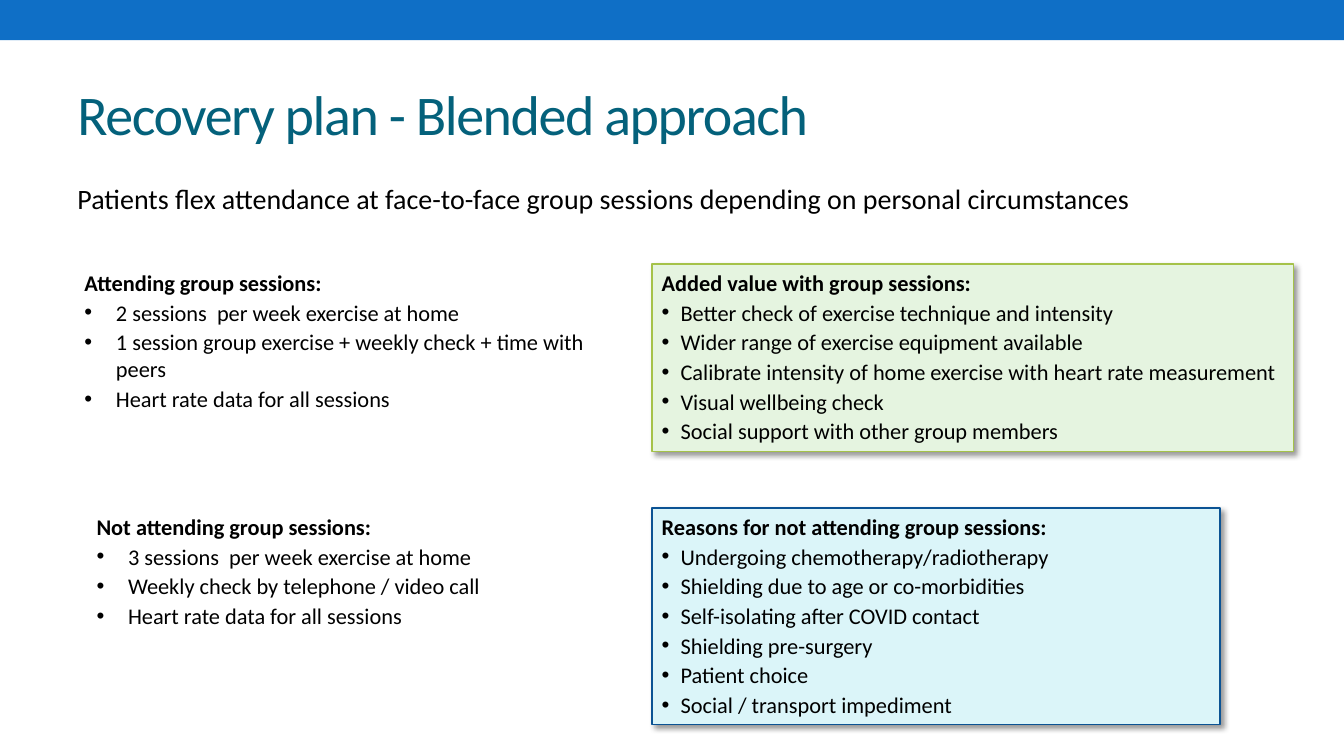
"""Build the slide on the blended recovery plan for group sessions."""

from dataclasses import dataclass
from typing import Optional

import lxml.etree
import pptx
import pptx.dml.color
import pptx.enum.shapes
import pptx.enum.text
import pptx.oxml.ns
import pptx.util

Pt = pptx.util.Pt
RGB = pptx.dml.color.RGBColor
qn = pptx.oxml.ns.qn


@dataclass(frozen=True)
class Theme:
    font: str = "Calibri"
    banner: str = "0F6FC6"
    title: str = "04617B"
    text: str = "000000"
    green_fill: str = "E5F4E0"
    green_line: str = "A5C249"
    blue_fill: str = "DBF5F9"
    blue_line: str = "0B5394"
    title_size: float = 40
    lead_size: float = 20
    list_size: float = 16


THEME = Theme()
PAGE_WIDTH, PAGE_HEIGHT = 960.48, 540
MARGIN = 48.24
RIGHT_COLUMN = 465.84
TOP_ROW, BOTTOM_ROW = 188.64, 362.88


@dataclass(frozen=True)
class Area:
    left: float
    top: float
    width: float
    height: float

    def lengths(self) -> tuple:
        return tuple(Pt(n) for n in (self.left, self.top, self.width, self.height))


@dataclass(frozen=True)
class Panel:
    area: Area
    heading: str
    items: tuple[str, ...]
    indent: float
    before: float = 0
    after: float = 0
    fill: Optional[str] = None
    line: Optional[str] = None


PANELS = (
    Panel(
        Area(53.28, TOP_ROW, 385.2, 110.16),
        "Attending group sessions:",
        (
            "2 sessions  per week exercise at home",
            "1 session group exercise + weekly check + time with peers",
            "Heart rate data for all sessions",
        ),
        indent=22.5,
        before=2,
    ),
    Panel(
        Area(61.92, BOTTOM_ROW, 291.6, 90.72),
        "Not attending group sessions:",
        (
            "3 sessions  per week exercise at home",
            "Weekly check by telephone / video call",
            "Heart rate data for all sessions",
        ),
        indent=22.5,
        before=2,
    ),
    Panel(
        Area(RIGHT_COLUMN, BOTTOM_ROW, 406.08, 154.8),
        "Reasons for not attending group sessions:",
        (
            "Undergoing chemotherapy/radiotherapy",
            "Shielding due to age or co-morbidities",
            "Self-isolating after COVID contact",
            "Shielding pre-surgery",
            "Patient choice",
            "Social / transport impediment",
        ),
        indent=13.5,
        after=2,
        fill=THEME.blue_fill,
        line=THEME.blue_line,
    ),
    Panel(
        Area(RIGHT_COLUMN, TOP_ROW, 458.64, 133.92),
        "Added value with group sessions:",
        (
            "Better check of exercise technique and intensity",
            "Wider range of exercise equipment available",
            "Calibrate intensity of home exercise with heart rate measurement",
            "Visual wellbeing check",
            "Social support with other group members",
        ),
        indent=13.5,
        after=2,
        fill=THEME.green_fill,
        line=THEME.green_line,
    ),
)


def add_rectangle(page, area: Area, fill: str, line: Optional[str] = None):
    """Draw a filled rectangle without a shadow."""
    box = page.shapes.add_shape(
        pptx.enum.shapes.MSO_SHAPE.RECTANGLE, *area.lengths()
    )
    box.shadow.inherit = False
    box.fill.solid()
    box.fill.fore_color.rgb = RGB.from_string(fill)
    if line:
        box.line.color.rgb = RGB.from_string(line)
        box.line.width = Pt(1)
    else:
        box.line.fill.background()
    return box


def add_shadow(box) -> None:
    """Give a shape a soft shadow towards the lower right."""
    effects = box.element.spPr.find(qn("a:effectLst"))
    shadow = lxml.etree.SubElement(
        effects, qn("a:outerShdw"), blurRad=str(Pt(4)), dist=str(Pt(3)),
        dir="2700000", algn="tl", rotWithShape="0",
    )
    colour = lxml.etree.SubElement(shadow, qn("a:srgbClr"), val="000000")
    lxml.etree.SubElement(colour, qn("a:alpha"), val="40000")


def style_paragraph(para, size: float, colour: str, bold: bool = False) -> None:
    """Set the font and the left alignment of a paragraph."""
    para.alignment = pptx.enum.text.PP_ALIGN.LEFT
    para.font.name = THEME.font
    para.font.size = Pt(size)
    para.font.bold = bold
    para.font.color.rgb = RGB.from_string(colour)


def add_bullet(para, indent: float) -> None:
    """Hang a paragraph on a round bullet."""
    properties = para._p.get_or_add_pPr()
    properties.set("marL", str(Pt(indent)))
    properties.set("indent", str(-Pt(indent)))
    font = lxml.etree.Element(qn("a:buFont"), typeface="Arial")
    bullet = lxml.etree.Element(qn("a:buChar"), char="•")
    defaults = properties.find(qn("a:defRPr"))
    defaults.addprevious(font)
    defaults.addprevious(bullet)


def add_line_of_text(page, area: Area, text: str, size: float, colour: str):
    """Add a text box with one paragraph and return its frame."""
    frame = page.shapes.add_textbox(*area.lengths()).text_frame
    frame.word_wrap = True
    frame.text = text
    style_paragraph(frame.paragraphs[0], size, colour)
    return frame


def add_panel(page, panel: Panel) -> None:
    """Draw a heading with its bulleted list, framed if it has a fill."""
    if panel.fill:
        box = add_rectangle(page, panel.area, panel.fill, panel.line)
        add_shadow(box)
    else:
        box = page.shapes.add_textbox(*panel.area.lengths())
    frame = box.text_frame
    frame.word_wrap = True
    frame.auto_size = pptx.enum.text.MSO_AUTO_SIZE.SHAPE_TO_FIT_TEXT
    frame.vertical_anchor = pptx.enum.text.MSO_ANCHOR.TOP
    frame.text = "\n".join((panel.heading, *panel.items))
    for index, para in enumerate(frame.paragraphs):
        style_paragraph(para, THEME.list_size, THEME.text, bold=index == 0)
        para.space_before = Pt(panel.before)
        para.space_after = Pt(panel.after)
        if index:
            add_bullet(para, panel.indent)


def main() -> None:
    """Build the deck and save it."""
    deck = pptx.Presentation()
    deck.slide_width, deck.slide_height = Pt(PAGE_WIDTH), Pt(PAGE_HEIGHT)
    page = deck.slides.add_slide(deck.slide_layouts[6])
    add_rectangle(page, Area(0, 0, PAGE_WIDTH, 28.8), THEME.banner)
    title = add_line_of_text(
        page, Area(MARGIN, 41.76, 864, 77.76),
        "Recovery plan - Blended approach", THEME.title_size, THEME.title,
    )
    title.vertical_anchor = pptx.enum.text.MSO_ANCHOR.MIDDLE
    span = title.paragraphs[0].runs[0]
    span._r.get_or_add_rPr().set("spc", "-100")
    lead = add_line_of_text(
        page, Area(MARGIN, 126, 864, 66.24),
        "Patients flex attendance at face-to-face group sessions "
        "depending on personal circumstances",
        THEME.lead_size, THEME.text,
    )
    lead.paragraphs[0].space_before = Pt(4)
    for panel in PANELS:
        add_panel(page, panel)
    deck.save("out.pptx")


if __name__ == "__main__":
    main()
